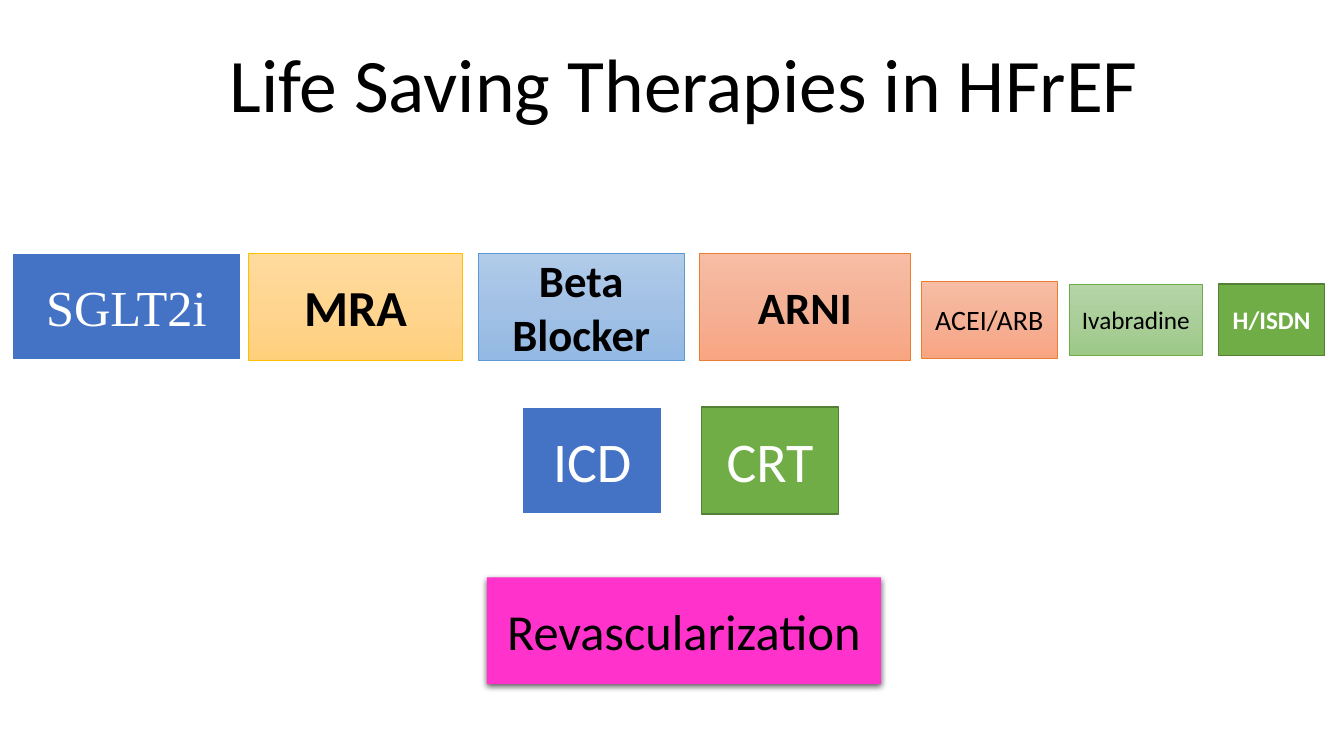
from copy import deepcopy

from lxml.etree import SubElement
from pptx import Presentation
from pptx.dml.color import RGBColor
from pptx.enum.shapes import MSO_SHAPE
from pptx.enum.text import MSO_ANCHOR, MSO_AUTO_SIZE, PP_ALIGN
from pptx.oxml.ns import qn
from pptx.util import Cm, Pt

BLACK = RGBColor(0x00, 0x00, 0x00)
WHITE = RGBColor(0xFF, 0xFF, 0xFF)
BLUE = RGBColor(0x44, 0x72, 0xC4)
GREEN = RGBColor(0x70, 0xAD, 0x47)
DARK_GREEN = RGBColor(0x53, 0x80, 0x35)
PINK = RGBColor(0xFF, 0x33, 0xCC)
ORANGE = RGBColor(0xED, 0x7D, 0x31)
GOLD = RGBColor(0xFF, 0xC0, 0x00)
SKY = RGBColor(0x5B, 0x9B, 0xD5)

# Gradients from top to bottom
ORANGE_FADE = [RGBColor(0xF7, 0xBD, 0xA5), RGBColor(0xF5, 0xB1, 0x96), RGBColor(0xF8, 0xA5, 0x82)]
GOLD_FADE = [RGBColor(0xFF, 0xDB, 0x9E), RGBColor(0xFF, 0xD5, 0x90), RGBColor(0xFF, 0xD0, 0x7C)]
SKY_FADE = [RGBColor(0xB1, 0xCB, 0xE9), RGBColor(0xA3, 0xC1, 0xE5), RGBColor(0x93, 0xB9, 0xE4)]
GREEN_FADE = [RGBColor(0xB5, 0xD5, 0xA7), RGBColor(0xAA, 0xCE, 0x9A), RGBColor(0x9C, 0xC9, 0x87)]

# Looks: fill colours, line colour, line width, text colour
BLUE_BOX = ([BLUE], WHITE, 1.5, WHITE)
GREEN_BOX = ([GREEN], DARK_GREEN, 1, WHITE)
PINK_BOX = ([PINK], None, 0, BLACK)
ORANGE_BOX = (ORANGE_FADE, ORANGE, 0.5, BLACK)
GOLD_BOX = (GOLD_FADE, GOLD, 0.5, BLACK)
SKY_BOX = (SKY_FADE, SKY, 0.5, BLACK)
PALE_GREEN_BOX = (GREEN_FADE, GREEN, 0.5, BLACK)

TALL = 2.69
DRUG_TOP, SMALL_DRUG_TOP, DEVICE_TOP = 6.38, 7.16, 10.26

# Therapy, left, top, width, height, look, text size, bold, font
therapies = [
    ("ACEI/ARB", 23.22, 7.09, 3.43, 1.93, ORANGE_BOX, 20, False, "Calibri"),
    ("MRA", 6.27, DRUG_TOP, 5.38, TALL, GOLD_BOX, 36, True, "Calibri"),
    ("H/ISDN", 30.71, SMALL_DRUG_TOP, 2.67, 1.8, GREEN_BOX, 18, True, "Calibri"),
    ("Revascularization", 12.27, 14.55, 9.93, TALL, PINK_BOX, 36, False, "Calibri"),
    ("ICD", 13.16, DEVICE_TOP, 3.53, TALL, BLUE_BOX, 40, False, "Calibri"),
    ("CRT", 17.68, DEVICE_TOP, 3.45, TALL, GREEN_BOX, 40, False, "Calibri"),
    ("Beta Blocker", 12.06, DRUG_TOP, 5.18, TALL, SKY_BOX, 32, True, "Calibri"),
    ("Ivabradine", 26.95, SMALL_DRUG_TOP, 3.35, 1.8, PALE_GREEN_BOX, 18, False, "Calibri"),
    ("SGLT2i", 0.3, DRUG_TOP, 5.77, TALL, BLUE_BOX, 36, False, "Times New Roman"),
    ("ARNI", 17.63, DRUG_TOP, 5.31, TALL, ORANGE_BOX, 32, True, "Calibri"),
]


def write(frame, text, size, color, bold=False, font="Calibri"):
    paragraph = frame.paragraphs[0]
    paragraph.alignment = PP_ALIGN.CENTER
    run = paragraph.add_run()
    run.text = text
    run.font.size = Pt(size)
    run.font.name = font
    run.font.bold = bold
    run.font.color.rgb = color


prs = Presentation()
prs.slide_width, prs.slide_height = Cm(33.87), Cm(19.05)
slide = prs.slides.add_slide(prs.slide_layouts[6])

# Title
title = slide.shapes.add_textbox(Cm(5.41), Cm(0.81), Cm(23.65), Cm(2.57))
title.text_frame.word_wrap = False
title.text_frame.auto_size = MSO_AUTO_SIZE.SHAPE_TO_FIT_TEXT
write(title.text_frame, "Life Saving Therapies in HFrEF", 54, BLACK)

# Therapy boxes
for name, left, top, width, height, look, size, bold, font in therapies:
    fills, line_color, line_width, text_color = look
    box = slide.shapes.add_shape(MSO_SHAPE.RECTANGLE, Cm(left), Cm(top), Cm(width), Cm(height))
    box.shadow.inherit = False

    if len(fills) == 1:
        box.fill.solid()
        box.fill.fore_color.rgb = fills[0]
    else:
        box.fill.gradient()
        box.fill.gradient_angle = 270
        stop_list = box.element.spPr.find(".//" + qn("a:gsLst"))
        stop_list.insert(1, deepcopy(stop_list[0]))
        for stop, color, position in zip(box.fill.gradient_stops, fills, (0, 0.5, 1)):
            stop.color.rgb = color
            stop.position = position

    if line_color is None:
        # A box without an outline gets a soft shadow below
        box.line.fill.background()
        effects = box.element.spPr.find(qn("a:effectLst"))
        shadow = SubElement(effects, qn("a:outerShdw"), blurRad=str(Pt(4.5)), dist=str(Pt(1.5)),
                            dir="5400000", algn="ctr", rotWithShape="0")
        shadow_color = SubElement(shadow, qn("a:srgbClr"), val=str(BLACK))
        SubElement(shadow_color, qn("a:alpha"), val="63000")
    else:
        box.line.color.rgb = line_color
        box.line.width = Pt(line_width)

    box.text_frame.word_wrap = True
    box.text_frame.vertical_anchor = MSO_ANCHOR.MIDDLE
    write(box.text_frame, name, size, text_color, bold, font)

prs.save("out.pptx")
